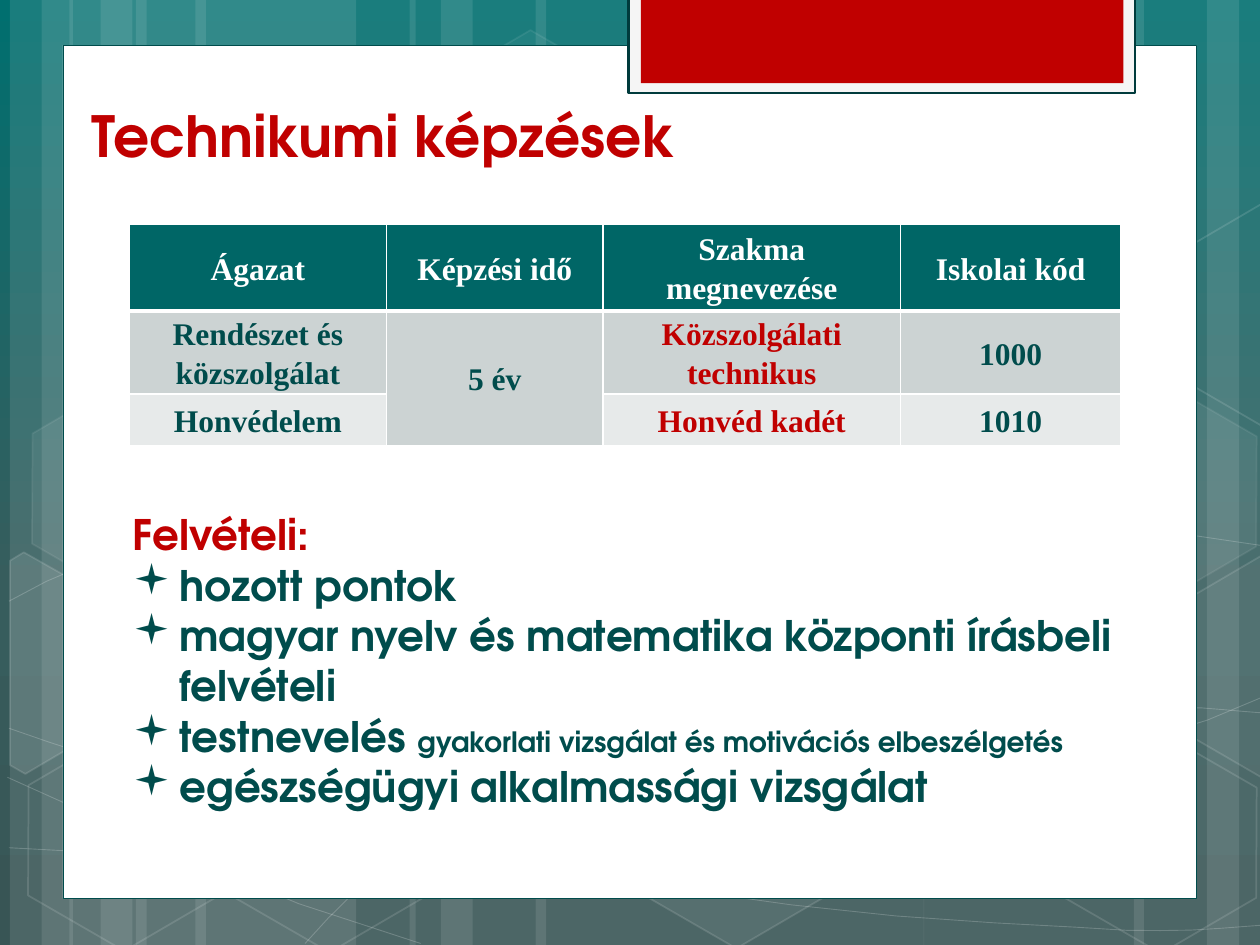
from collections import namedtuple
from copy import deepcopy
from math import cos, radians, sin

from lxml import etree
from pptx import Presentation
from pptx import util as u
from pptx.dml.color import RGBColor
from pptx.enum import shapes, text
from pptx.oxml.ns import qn

WHITE = RGBColor(0xFF, 0xFF, 0xFF)
SMOKE = RGBColor(0xF5, 0xF5, 0xF5)
RED = RGBColor(0xC0, 0x00, 0x00)
TEAL = RGBColor(0x00, 0x66, 0x66)
DARK_TEAL = RGBColor(0x00, 0x4C, 0x4C)
DEEP_TEAL = RGBColor(0x00, 0x3B, 0x3C)
GREY = RGBColor(0xCC, 0xD3, 0xD3)
LIGHT_GREY = RGBColor(0xE7, 0xEA, 0xEA)
SKY = [
    (0, RGBColor(0x00, 0x6F, 0x6F)),
    (0.62, RGBColor(0x37, 0x5D, 0x5D)),
    (1, RGBColor(0x38, 0x55, 0x55)),
]
HEADING_FONT = "TeX Gyre Adventor"
TABLE_FONT = "Times New Roman"
Box = namedtuple("Box", "left top width height")

BANDS = [
    (2.74, 4.44), (0.2, 1.27), (0.84, 2.12), (3.94, 4.44), (1.4, 1.27), (2.03, 2.12),
    (18.62, 4.44), (24.33, 1.27), (22.86, 2.12), (10.8, 7.83), (8.26, 1.27), (8.89, 2.12),
]
CURVES = [
    [(0.18, 17.09), (1.55, 17.17), (2.92, 17.25), (4.83, 17.22), (6.73, 17.2),
     (9.09, 17.15), (11.63, 16.89), (14.17, 16.64), (17.78, 16.15), (20.12, 15.67),
     (22.43, 15.19), (24.82, 14.43), (25.58, 14)],
    [(0.18, 12.12), (0.91, 11.71), (1.65, 11.33), (3.07, 10.95), (4.52, 10.57),
     (6.58, 10.01), (8.81, 9.83), (11.07, 9.65), (13.82, 9.63), (16.61, 9.83),
     (19.41, 10.03), (24.05, 10.82), (25.58, 11.02)],
    [(0.15, 15.67), (3.23, 17.07), (6.27, 18.47), (8.48, 19.02)],
    [(0.18, 14.68), (0.97, 14.96), (1.78, 15.24), (3.25, 15.65), (4.72, 16.03),
     (6.93, 16.66), (9.07, 17.09), (11.18, 17.53), (13.84, 17.98), (15.95, 18.24),
     (18.06, 18.52), (20.32, 18.62), (21.67, 18.69), (22.99, 18.8), (23.34, 18.75),
     (24, 18.75), (24.66, 18.72), (25.12, 18.67), (25.58, 18.64)],
    [(6.15, 19.02), (6.6, 18.52), (7.06, 18.01), (7.67, 17.55), (8.28, 17.09),
     (9.14, 16.59), (9.86, 16.23), (10.57, 15.88), (11, 15.72), (11.94, 15.47),
     (12.85, 15.21), (14.55, 14.86), (15.44, 14.68), (16.36, 14.5), (16.48, 14.5),
     (17.27, 14.45), (18.06, 14.38), (19.3, 14.3), (20.17, 14.27), (21.06, 14.25),
     (22.5, 14.27), (22.5, 14.27), (23.07, 14.27), (23.64, 14.27), (24.21, 14.27),
     (24.66, 14.3), (25.1, 14.35), (25.55, 14.38)],
]
HEXAGONS = [
    (8.48, 0.91, 4, 8), (12.62, 14.96, 6, 12), (0.28, 15.01, None, 12), (0.36, 7.92, 7, 8),
    (4.42, 15.04, None, 12), (19.13, 11.51, 10, 12), (21.18, 15.06, None, 12),
    (21.18, 7.98, 7, 8),
]
LEFT_EDGE = [(0.2, 11.3), (0.48, 11.13), (2.44, 12.24), (2.41, 14.48), (0.51, 15.6), (0.2, 15.42)]
RIGHT_EDGE = [(23.52, 12.32), (25.43, 11.2), (25.63, 11.33), (25.63, 15.57), (25.45, 15.67),
              (23.52, 14.55)]
CUT_HEXAGONS = [
    (LEFT_EDGE, (0.91, 13.59), 10),
    (RIGHT_EDGE, (25.02, 13.21), 4),
    ([(x, y - 7.09) for x, y in RIGHT_EDGE], (25.02, 6.12), None),
]
ROWS = [
    ["Ágazat", "Képzési idő", "Szakma megnevezése", "Iskolai kód"],
    ["Rendészet és közszolgálat", "5 év", "Közszolgálati technikus", "1000"],
    ["Honvédelem", "", "Honvéd kadét", "1010"],
]
EXAM_PARTS = [
    [("hozott pontok", 24)],
    [("magyar nyelv és matematika központi írásbeli felvételi", 24)],
    [("testnevelés ", 24), ("gyakorlati vizsgálat és motivációs elbeszélgetés", 16)],
    [("egészségügyi alkalmassági vizsgálat", 24)],
]


def color_in(ink, owner, color, alpha):
    if color is None:
        ink.background()
        return
    ink.solid()
    ink.fore_color.rgb = color
    if alpha:
        tint = owner.find(f"{qn('a:solidFill')}/{qn('a:srgbClr')}")
        etree.SubElement(tint, qn("a:alpha"), val=str(alpha * 1000))


def paint(part, fill=None, line=None, weight=1, fill_alpha=None, line_alpha=None):
    part.shadow.inherit = False
    properties = part.element.spPr
    part.line.width = u.Pt(weight)
    color_in(part.fill, properties, fill, fill_alpha)
    color_in(part.line.fill, properties.find(qn("a:ln")), line, line_alpha)


def add_preset(slide, preset, box):
    return slide.shapes.add_shape(preset, *map(u.Cm, box))


def add_outline(slide, box, points, close):
    spots = [(u.Cm(box.left + x), u.Cm(box.top + y)) for x, y in points]
    builder = slide.shapes.build_freeform(*spots[0])
    builder.add_line_segments(spots[1:], close=close)
    return builder.convert_to_shape()


def bend(controls, steps=3):
    points = [controls[0]]
    for first in range(0, len(controls) - 1, 3):
        piece = controls[first:first + 4]
        for step in range(1, steps + 1):
            t = step / steps
            weights = ((1 - t) ** 3, 3 * t * (1 - t) ** 2, 3 * t * t * (1 - t), t ** 3)
            points.append(tuple(sum(w * p[axis] for w, p in zip(weights, piece)) for axis in (0, 1)))
    return points


def turn_back(points, center, degrees):
    c, s = cos(radians(degrees)), sin(radians(degrees))
    offsets = [(x - center[0], y - center[1]) for x, y in points]
    return [(center[0] + x * c + y * s, center[1] - x * s + y * c) for x, y in offsets]


def set_sky(slide):
    sky = slide.background.fill
    sky.gradient()
    sky.gradient_angle = 270
    stop_list = slide.element.find(f".//{qn('a:gsLst')}")
    stop_list.append(deepcopy(stop_list[-1]))
    for stop, (position, color) in zip(sky.gradient_stops, SKY):
        stop.position = position
        stop.color.rgb = color


def add_backdrop(slide, box):
    for left, width in BANDS:
        band = add_preset(slide, shapes.MSO_SHAPE.RECTANGLE,
                          (box.left + left, box.top, width, box.height))
        paint(band, WHITE, fill_alpha=10)
    for controls in CURVES:
        curve = add_outline(slide, box, bend(controls), False)
        paint(curve, line=WHITE, weight=0.5, line_alpha=20)
    for left, top, fill_alpha, line_alpha in HEXAGONS:
        hexagon = add_preset(slide, shapes.MSO_SHAPE.HEXAGON,
                             (box.left + left, box.top + top, 4.44, 3.86))
        hexagon.adjustments[0] = 0.285
        hexagon.rotation = 30
        paint(hexagon, WHITE if fill_alpha else None, WHITE, 1, fill_alpha, line_alpha)
    for points, center, fill_alpha in CUT_HEXAGONS:
        cut = add_outline(slide, box, turn_back(points, center, 30), True)
        cut.rotation = 30
        paint(cut, WHITE if fill_alpha else None, WHITE, 1, fill_alpha, 12)


def add_panel(slide, box):
    paint(add_preset(slide, shapes.MSO_SHAPE.RECTANGLE, box), WHITE, DARK_TEAL, 0.5)
    top = box.top - 0.96
    tab = add_preset(slide, shapes.MSO_SHAPE.RECTANGLE, (box.left + 11.4, top, 10.21, 1.93))
    paint(tab, SMOKE, DEEP_TEAL, 1.25)
    flag = add_preset(slide, shapes.MSO_SHAPE.RECTANGLE, (box.left + 11.65, top, 9.73, 1.73))
    paint(flag, RED)


def style(paragraph, name, size, color):
    font = paragraph.font
    font.name, font.size, font.bold = name, u.Pt(size), True
    font.color.rgb = color


def add_title(slide, box):
    frame = slide.shapes.add_textbox(*map(u.Cm, box)).text_frame
    frame.word_wrap = True
    frame.vertical_anchor = text.MSO_ANCHOR.BOTTOM
    frame.text = "Technikumi képzések"
    style(frame.paragraphs[0], HEADING_FONT, 32.4, RED)


def underline_cell(cell):
    border = etree.Element(qn("a:lnB"), w=str(u.Pt(3)))
    ink = etree.SubElement(border, qn("a:solidFill"))
    etree.SubElement(ink, qn("a:srgbClr"), val=str(WHITE))
    cell._tc.get_or_add_tcPr().insert(0, border)


def add_courses(slide, box):
    courses = slide.shapes.add_table(3, 4, *map(u.Cm, box)).table
    for column, width in zip(courses.columns, (5.18, 4.37, 5.99, 4.45)):
        column.width = u.Cm(width)
    for row, height in zip(courses.rows, (1.75, 1.57, 1.04)):
        row.height = u.Cm(height)
    for r, (words, fill) in enumerate(zip(ROWS, (TEAL, GREY, LIGHT_GREY))):
        for c, word in enumerate(words):
            cell = courses.cell(r, c)
            cell.fill.solid()
            cell.fill.fore_color.rgb = fill
            cell.vertical_anchor = text.MSO_ANCHOR.MIDDLE
            cell.margin_left = cell.margin_right = u.Cm(0.18)
            cell.margin_top = cell.margin_bottom = 0
            cell.text = word
            paragraph = cell.text_frame.paragraphs[0]
            paragraph.alignment = text.PP_ALIGN.CENTER
            paragraph.line_spacing = 1.1
            style(paragraph, TABLE_FONT, 18, WHITE if r == 0 else RED if c == 2 else DARK_TEAL)
            if r == 0:
                underline_cell(cell)
    courses.cell(1, 1).merge(courses.cell(2, 1))


def add_admission(slide, box):
    frame = slide.shapes.add_textbox(*map(u.Cm, box)).text_frame
    frame.word_wrap = True
    frame.text = "Felvételi:"
    style(frame.paragraphs[0], HEADING_FONT, 24, RED)
    for runs in EXAM_PARTS:
        paragraph = frame.add_paragraph()
        style(paragraph, HEADING_FONT, 24, DARK_TEAL)
        properties = paragraph._p.get_or_add_pPr()
        properties.set("marL", str(u.Cm(0.94)))
        properties.set("indent", str(-u.Cm(0.94)))
        properties.insert(0, etree.Element(qn("a:buFont"), typeface="Wingdings"))
        properties.insert(1, etree.Element(qn("a:buChar"), char="▪"))
        for words, size in runs:
            run = paragraph.add_run()
            run.text = words
            if size != 24:
                run.font.size = u.Pt(size)


def main():
    deck = Presentation()
    deck.slide_width, deck.slide_height = u.Cm(25.4), u.Cm(19.05)
    slide = deck.slides.add_slide(deck.slide_layouts[6])
    set_sky(slide)
    add_backdrop(slide, Box(0, 0, 25.4, 19.05))
    add_panel(slide, Box(1.27, 0.91, 22.86, 17.2))
    add_title(slide, Box(1.59, 1.93, 21.26, 1.6))
    add_courses(slide, Box(2.61, 4.52, 19.99, 4.36))
    add_admission(slide, Box(2.43, 10.13, 21.01, 6.4))
    deck.save("out.pptx")


if __name__ == "__main__":
    main()
